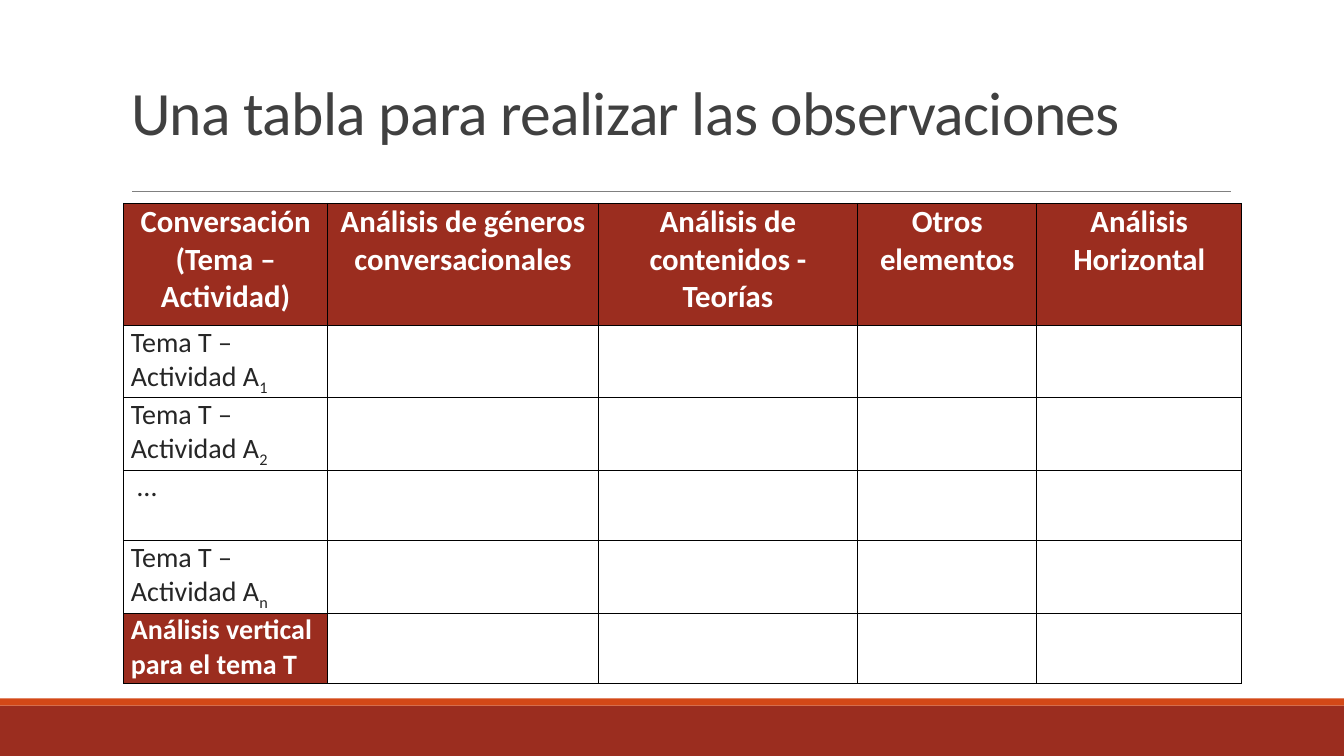
from lxml import etree
from pptx import Presentation
from pptx.dml.color import RGBColor
from pptx.enum.shapes import MSO_CONNECTOR, MSO_SHAPE
from pptx.enum.text import MSO_ANCHOR, MSO_AUTO_SIZE, PP_ALIGN
from pptx.oxml.ns import qn
from pptx.util import Cm, Pt

RECTANGLE = MSO_SHAPE.RECTANGLE
STRAIGHT = MSO_CONNECTOR.STRAIGHT
BOTTOM = MSO_ANCHOR.BOTTOM
NO_AUTOFIT = MSO_AUTO_SIZE.NONE
LEFT, CENTER = PP_ALIGN.LEFT, PP_ALIGN.CENTER

FONT = "Calibri"
BRICK, ORANGE, WHITE, BLACK = "9B2D1F", "D34817", "FFFFFF", "000000"
GRAY, TITLE_GRAY, TEXT_GRAY = "808080", "404040", "262626"
PAGE_WIDTH, PAGE_HEIGHT = 33.87, 19.05

COLUMN_WIDTHS = [5.13, 6.83, 6.53, 4.52, 5.16]
ROW_HEIGHTS = [3.07] + [1.78] * 5
HEADERS = [
    "Conversación (Tema – Actividad)",
    "Análisis de géneros conversacionales",
    "Análisis de contenidos - Teorías",
    "Otros elementos",
    "Análisis Horizontal",
]
ACTIVITY = "Tema T – Actividad A"
# Each row label is a text and its subscript
ROW_LABELS = [(ACTIVITY, "1"), (ACTIVITY, "2"), (" …", ""), (ACTIVITY, "n")]
VERTICAL_LABEL = "Análisis vertical para el tema T"


def color(value):
    return RGBColor.from_string(value)


def add_run(para, text, size, font_color, bold=False):
    run = para.add_run()
    run.text = text
    run.font.name = FONT
    run.font.size = Pt(size)
    run.font.bold = bold
    run.font.color.rgb = color(font_color)
    return run


def add_band(page, top, height, fill):
    band = page.shapes.add_shape(RECTANGLE, 0, Cm(top), Cm(PAGE_WIDTH), Cm(height))
    band.shadow.inherit = False
    band.fill.solid()
    band.fill.fore_color.rgb = color(fill)
    band.line.fill.background()


def add_rule(page, left, right, top):
    rule = page.shapes.add_connector(STRAIGHT, Cm(left), Cm(top), Cm(right), Cm(top))
    rule.line.color.rgb = color(GRAY)
    rule.line.width = Pt(0.5)
    etree.SubElement(rule._element.spPr, qn("a:effectLst"))


def set_title(page, text):
    title = page.shapes.title
    title.left, title.top = Cm(3.05), Cm(0.8)
    title.width, title.height = Cm(27.94), Cm(3.07)
    frame = title.text_frame
    frame.word_wrap = True
    frame.auto_size = NO_AUTOFIT
    frame.vertical_anchor = BOTTOM
    para = frame.paragraphs[0]
    para.alignment = LEFT
    para.line_spacing = 0.85
    run = add_run(para, text, 44, TITLE_GRAY)
    run.font._element.set("spc", "-50")


def format_cell(cell, fill):
    cell.margin_left = cell.margin_right = Cm(0.18)
    cell.margin_top = cell.margin_bottom = 0
    # Borders come before the fill in the cell properties
    properties = cell._tc.get_or_add_tcPr()
    for side in ("lnL", "lnR", "lnT", "lnB"):
        border = etree.SubElement(properties, qn(f"a:{side}"), w=str(Pt(1)))
        paint = etree.SubElement(border, qn("a:solidFill"))
        etree.SubElement(paint, qn("a:srgbClr"), val=BLACK)
    cell.fill.solid()
    cell.fill.fore_color.rgb = color(fill)


def add_observation_table(page):
    frame = page.shapes.add_table(
        len(ROW_HEIGHTS), len(COLUMN_WIDTHS), Cm(3.12), Cm(5.13),
        Cm(sum(COLUMN_WIDTHS)), Cm(sum(ROW_HEIGHTS)))
    table = frame.table
    table.first_row = table.horz_banding = False
    for column, width in zip(table.columns, COLUMN_WIDTHS):
        column.width = Cm(width)
    for row, height in zip(table.rows, ROW_HEIGHTS):
        row.height = Cm(height)

    # Header row and the last label are filled
    last = len(ROW_HEIGHTS) - 1
    for i, row in enumerate(table.rows):
        for j, cell in enumerate(row.cells):
            filled = i == 0 or (i == last and j == 0)
            format_cell(cell, BRICK if filled else WHITE)

    # Column headers
    for j, header in enumerate(HEADERS):
        para = table.cell(0, j).text_frame.paragraphs[0]
        para.alignment = CENTER
        add_run(para, header, 22, WHITE, bold=True)

    # Row labels
    for i, (label, subscript) in enumerate(ROW_LABELS, start=1):
        para = table.cell(i, 0).text_frame.paragraphs[0]
        add_run(para, label, 20, TEXT_GRAY)
        if subscript:
            run = add_run(para, subscript, 20, TEXT_GRAY)
            run.font._element.set("baseline", "-25000")
    para = table.cell(last, 0).text_frame.paragraphs[0]
    add_run(para, VERTICAL_LABEL, 20, WHITE, bold=True)


def main():
    deck = Presentation()
    deck.slide_width, deck.slide_height = Cm(PAGE_WIDTH), Cm(PAGE_HEIGHT)
    page = deck.slides.add_slide(deck.slide_layouts[5])

    # Footer bands and title rule
    add_band(page, 17.78, 1.27, BRICK)
    add_band(page, 17.6, 0.18, ORANGE)
    add_rule(page, 3.33, 31.01, 4.83)

    # Content
    set_title(page, "Una tabla para realizar las observaciones")
    add_observation_table(page)
    deck.save("out.pptx")


if __name__ == "__main__":
    main()
